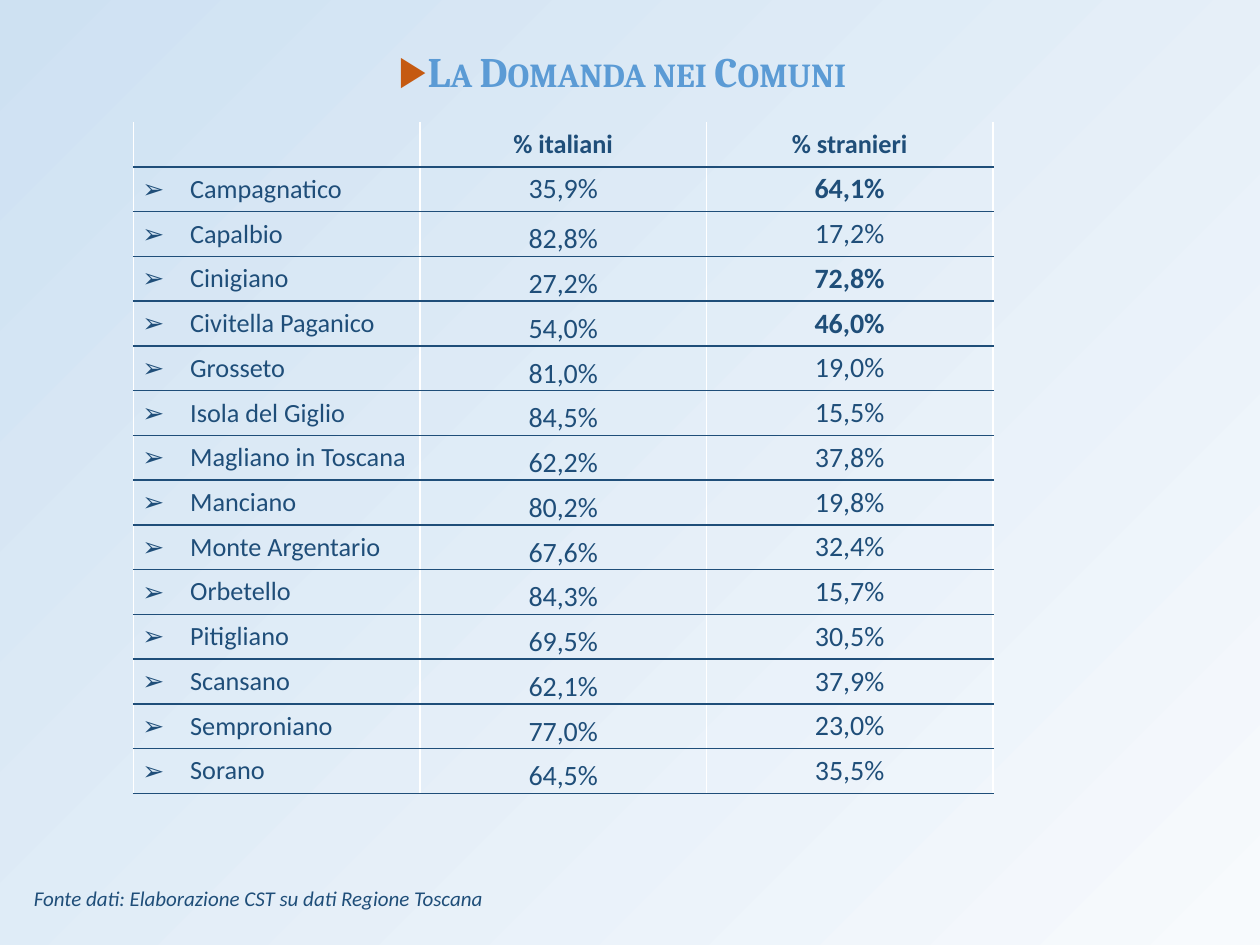
import dataclasses

import lxml.etree
import pptx
import pptx.dml.color
import pptx.enum.text
import pptx.oxml.ns
import pptx.util

Inches = pptx.util.Inches
Align = pptx.enum.text.PP_ALIGN
Anchor = pptx.enum.text.MSO_ANCHOR


@dataclasses.dataclass(frozen=True)
class Theme:
    """Hold the colours, fonts and type sizes."""
    ink: str = "1F4E79"
    head: str = "5B9BD5"
    mark: str = "C55A11"
    rule: str = "FFFFFF"
    pale: str = "F7FAFD"
    deep: str = "CEE1F2"
    serif: str = "Cambria"
    sans: str = "Calibri"
    title: int = 24
    name: int = 15
    value: int = 16
    note: int = 12


THEME = Theme()
HEADS = ("", "% italiani", "% stranieri")
TOWNS = (
    ("Campagnatico", "35,9%", "64,1%"),
    ("Capalbio", "82,8%", "17,2%"),
    ("Cinigiano", "27,2%", "72,8%"),
    ("Civitella Paganico", "54,0%", "46,0%"),
    ("Grosseto", "81,0%", "19,0%"),
    ("Isola del Giglio", "84,5%", "15,5%"),
    ("Magliano in Toscana", "62,2%", "37,8%"),
    ("Manciano", "80,2%", "19,8%"),
    ("Monte Argentario", "67,6%", "32,4%"),
    ("Orbetello", "84,3%", "15,7%"),
    ("Pitigliano", "69,5%", "30,5%"),
    ("Scansano", "62,1%", "37,9%"),
    ("Semproniano", "77,0%", "23,0%"),
    ("Sorano", "64,5%", "35,5%"),
)
STRONG = {"Campagnatico", "Cinigiano", "Civitella Paganico"}


def tint(code):
    """Turn a hex code into a colour."""
    return pptx.dml.color.RGBColor.from_string(code)


def child(node, tag, **attrs):
    """Append a DrawingML child element."""
    return lxml.etree.SubElement(node, pptx.oxml.ns.qn(tag), **attrs)


def write(para, text, size, color=THEME.ink, face=THEME.sans, bold=False, slant=False):
    """Add one styled run to a paragraph."""
    run = para.add_run()
    run.text = text
    font = run.font
    font.size, font.name = pptx.util.Pt(size), face
    font.bold, font.italic = bold, slant
    font.color.rgb = tint(color)
    return run


def bullet(para, sign, indent, color):
    """Give a paragraph a hanging bullet."""
    props = para._p.get_or_add_pPr()
    props.set("marL", str(Inches(indent)))
    props.set("indent", str(-Inches(indent)))
    child(child(props, "a:buClr"), "a:srgbClr", val=color)
    child(props, "a:buFont", typeface="Arial")
    child(props, "a:buChar", char=sign)


def edge(cell, top):
    """Draw the borders of a cell and clear its fill."""
    props = cell._tc.get_or_add_tcPr()
    sides = (("L", THEME.rule), ("R", THEME.rule), ("T", top), ("B", THEME.ink))
    for side, color in sides:
        line = child(props, f"a:ln{side}", w=str(pptx.util.Pt(1)))
        if color:
            child(child(line, "a:solidFill"), "a:srgbClr", val=color)
        else:
            child(line, "a:noFill")
    cell.fill.background()


def pad(cell, side, top, base):
    """Set the inner margins of a cell."""
    cell.margin_left = cell.margin_right = Inches(side)
    cell.margin_top, cell.margin_bottom = Inches(top), Inches(base)


def paint(slide):
    """Fill the background with a diagonal gradient."""
    fill = slide.background.fill
    fill.gradient()
    fill.gradient_angle = 135
    for stop, color in zip(fill.gradient_stops, (THEME.pale, THEME.deep)):
        stop.color.rgb = tint(color)


def heading(slide, left, top, width, height):
    """Place the bulleted title."""
    shape = slide.shapes.title
    shape.left, shape.top, shape.width, shape.height = map(Inches, (left, top, width, height))
    frame = shape.text_frame
    frame.auto_size = pptx.enum.text.MSO_AUTO_SIZE.NONE
    frame.margin_right = Inches(0.22)
    para = frame.paragraphs[0]
    para.alignment = Align.CENTER
    bullet(para, "▶", 0.23, THEME.mark)
    run = write(para, "La Domanda nei Comuni", THEME.title, THEME.head, THEME.serif, bold=True)
    run.font._element.set("cap", "small")


def grid(slide, left, top, width, height):
    """Place the table of towns."""
    rows = (HEADS, *TOWNS)
    box = map(Inches, (left, top, width, height))
    table = slide.shapes.add_table(len(rows), len(HEADS), *box).table
    table.first_row = table.horz_banding = False
    for col in table.columns:
        col.width = Inches(width / len(HEADS))
    for r, row in enumerate(rows):
        table.rows[r].height = Inches(height / len(rows))
        for c, text in enumerate(row):
            cell = table.cell(r, c)
            edge(cell, THEME.ink if r else None)
            low = c == 1 and r > 1
            cell.vertical_anchor = Anchor.BOTTOM if low else Anchor.MIDDLE
            pad(cell, *((0.01, 0.01, 0) if low or not text else (0.07, 0.04, 0.04)))
            if not text:
                continue
            para = cell.text_frame.paragraphs[0]
            if c:
                para.alignment = Align.CENTER
            else:
                bullet(para, "➢", 0.38, THEME.ink)
            size = THEME.value if r and c else THEME.name
            write(para, text, size, bold=r == 0 or (c == 2 and row[0] in STRONG))


def credit(slide, left, top, width, height):
    """Place the note on the data source."""
    shape = slide.shapes.add_textbox(*map(Inches, (left, top, width, height)))
    shape.text_frame.word_wrap = True
    text = "Fonte dati: Elaborazione CST su dati Regione Toscana"
    write(shape.text_frame.paragraphs[0], text, THEME.note, slant=True)


def main():
    """Build and save the slide."""
    deck = pptx.Presentation()
    deck.slide_width, deck.slide_height = Inches(10), Inches(7.5)
    slide = deck.slides.add_slide(deck.slide_layouts[5])
    paint(slide)
    heading(slide, 0, 0.31, 10, 0.5)
    credit(slide, 0.17, 6.98, 4.11, 0.3)
    grid(slide, 1.06, 0.97, 6.82, 5.33)
    deck.save("out.pptx")


if __name__ == "__main__":
    main()
